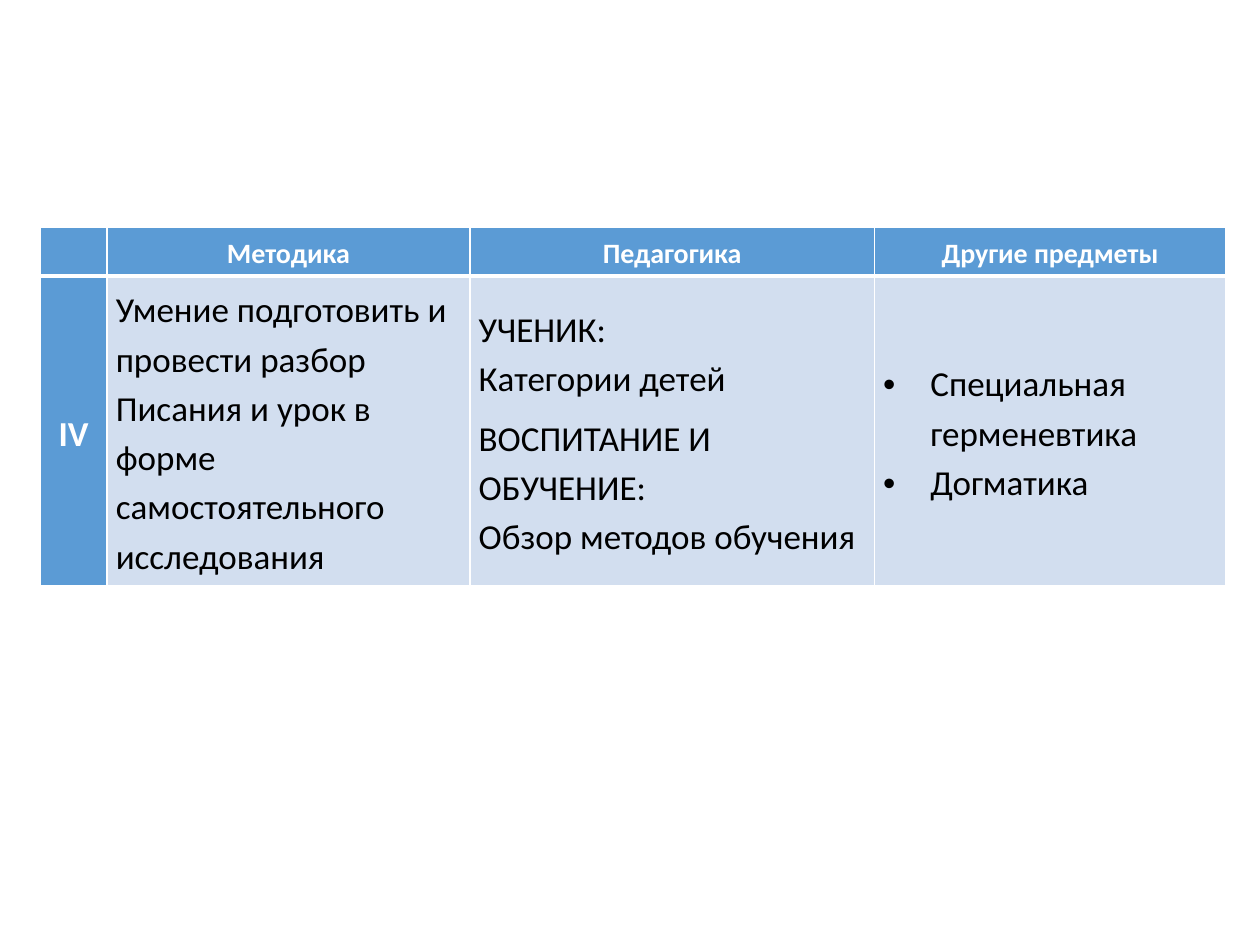
from dataclasses import dataclass

import lxml.etree
import pptx
import pptx.dml.color
import pptx.enum.text
import pptx.oxml.ns
import pptx.util

Pt = pptx.util.Pt
qn = pptx.oxml.ns.qn
ALIGN = pptx.enum.text.PP_ALIGN

COLORS = {"header": "5B9BD5", "body": "D2DEEF", "light": "FFFFFF", "dark": "000000"}
LEFT, TOP = 23, 129.6
COLUMN_WIDTHS = [38.2, 207.4, 231.1, 200.9]
ROW_HEIGHTS = [28.1, 177]
CELL_FORMAT = {
    "margin_left": Pt(5), "margin_right": Pt(5),
    "margin_top": 0, "margin_bottom": 0,
    "vertical_anchor": pptx.enum.text.MSO_ANCHOR.MIDDLE,
}
BULLET_INDENT = 27


@dataclass(frozen=True)
class Line:
    text: str
    space_before: float = 0
    bullet: bool = False


@dataclass(frozen=True)
class Style:
    fill: str
    color: str
    size: float
    bold: bool
    align: ALIGN


HEADER = Style("header", "light", 16, True, ALIGN.CENTER)
LEVEL = Style("header", "light", 20, True, ALIGN.CENTER)
BODY = Style("body", "dark", 20, False, ALIGN.LEFT)

ROWS = [
    [
        (HEADER, []),
        (HEADER, [Line("Методика")]),
        (HEADER, [Line("Педагогика")]),
        (HEADER, [Line("Другие предметы")]),
    ],
    [
        (LEVEL, [Line("IV")]),
        (BODY, [Line("Умение подготовить и провести разбор Писания и урок в форме "
                     "самостоятельного исследования")]),
        (BODY, [Line("УЧЕНИК:"), Line("Категории детей"),
                Line("ВОСПИТАНИЕ И ОБУЧЕНИЕ:", space_before=6),
                Line("Обзор методов обучения")]),
        (BODY, [Line("Специальная герменевтика", bullet=True),
                Line("Догматика", bullet=True)]),
    ],
]


def rgb(name: str) -> pptx.dml.color.RGBColor:
    return pptx.dml.color.RGBColor.from_string(COLORS[name])


def set_borders(cell, widths: dict[str, float]) -> None:
    """Draw light borders; widths maps the sides L, R, T, B, in that order, to points."""
    properties = cell._tc.get_or_add_tcPr()
    for position, (side, width) in enumerate(widths.items()):
        border = lxml.etree.Element(qn(f"a:ln{side}"), w=str(Pt(width)))
        fill = lxml.etree.SubElement(border, qn("a:solidFill"))
        lxml.etree.SubElement(fill, qn("a:srgbClr"), val=COLORS["light"])
        properties.insert(position, border)


def add_bullet(para) -> None:
    properties = para._p.get_or_add_pPr()
    properties.set("marL", str(Pt(BULLET_INDENT)))
    properties.set("indent", str(-Pt(BULLET_INDENT)))
    lxml.etree.SubElement(properties, qn("a:buFont"), typeface="Arial")
    lxml.etree.SubElement(properties, qn("a:buChar"), char="•")


def write_line(para, line: Line, style: Style) -> None:
    para_format = {"alignment": style.align, "line_spacing": 1.15,
                   "space_before": Pt(line.space_before)}
    for name, value in para_format.items():
        setattr(para, name, value)
    if line.bullet:
        add_bullet(para)
    span = para.add_run()
    span.text = line.text
    font_format = {"name": "Calibri", "size": Pt(style.size), "bold": style.bold}
    for name, value in font_format.items():
        setattr(span.font, name, value)
    span.font.color.rgb = rgb(style.color)


def fill_cell(cell, style: Style, lines: list[Line]) -> None:
    for name, value in CELL_FORMAT.items():
        setattr(cell, name, value)
    cell.fill.solid()
    cell.fill.fore_color.rgb = rgb(style.fill)
    frame = cell.text_frame
    for index, line in enumerate(lines):
        para = frame.add_paragraph() if index else frame.paragraphs[0]
        write_line(para, line, style)


def add_curriculum_table(page) -> None:
    table = page.shapes.add_table(
        len(ROW_HEIGHTS), len(COLUMN_WIDTHS), Pt(LEFT), Pt(TOP),
        Pt(sum(COLUMN_WIDTHS)), Pt(sum(ROW_HEIGHTS))).table
    table.horz_banding = False
    for column, width in zip(table.columns, COLUMN_WIDTHS):
        column.width = Pt(width)
    for row, height in zip(table.rows, ROW_HEIGHTS):
        row.height = Pt(height)
    for row_index, cells in enumerate(ROWS):
        is_header = row_index == 0
        widths = {"L": 1, "R": 1, "T": 1 if is_header else 3, "B": 3 if is_header else 1}
        for column_index, (style, lines) in enumerate(cells):
            cell = table.cell(row_index, column_index)
            fill_cell(cell, style, lines)
            set_borders(cell, widths)


def main() -> None:
    deck = pptx.Presentation()
    deck.slide_width, deck.slide_height = Pt(720), Pt(540)
    page = deck.slides.add_slide(deck.slide_layouts[6])
    add_curriculum_table(page)
    deck.save("out.pptx")


if __name__ == "__main__":
    main()
